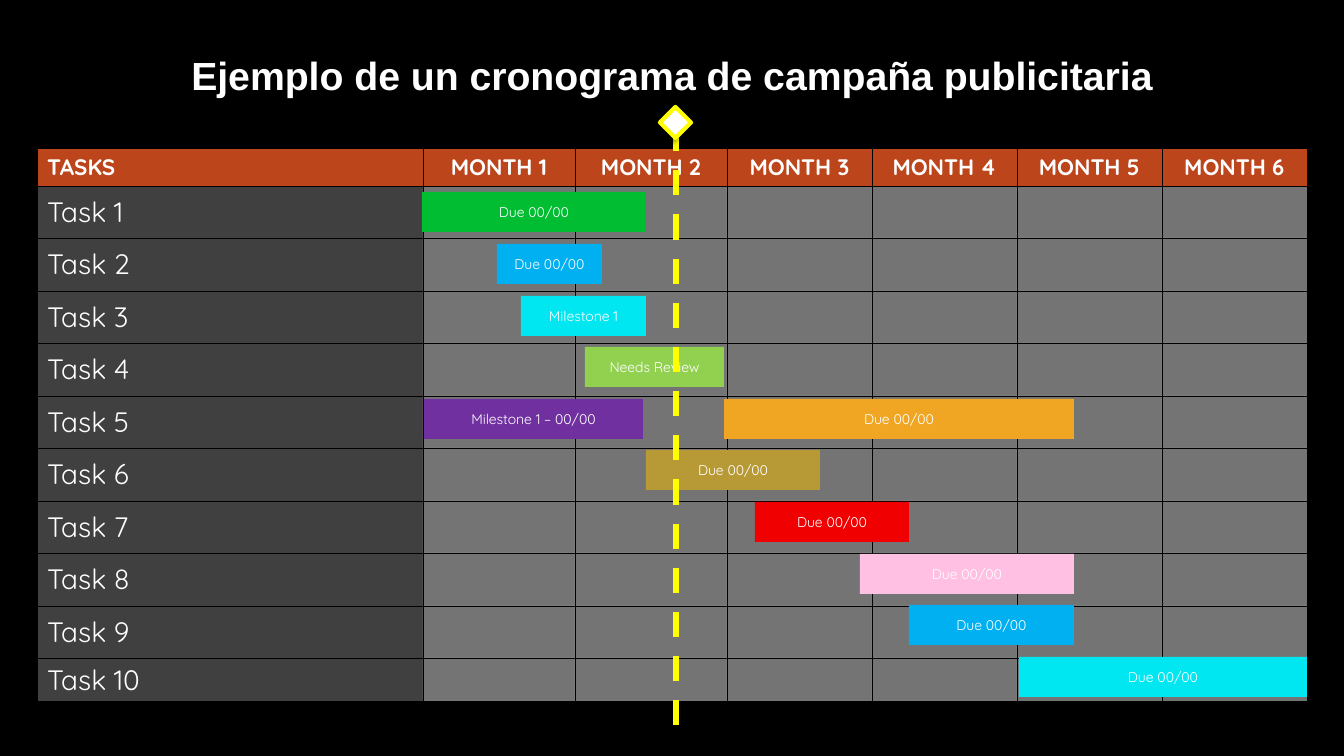
"""Builds a one-slide Gantt timeline for an advertising campaign."""
from dataclasses import dataclass

from lxml import etree
from pptx import Presentation
from pptx.dml.color import RGBColor
from pptx.enum.dml import MSO_LINE
from pptx.enum.shapes import MSO_CONNECTOR, MSO_SHAPE
from pptx.enum.text import MSO_ANCHOR, PP_ALIGN
from pptx.oxml.ns import qn
from pptx.util import Pt

RECTANGLE, DIAMOND = MSO_SHAPE.RECTANGLE, MSO_SHAPE.DIAMOND
STRAIGHT, DASH = MSO_CONNECTOR.STRAIGHT, MSO_LINE.DASH
LEFT, CENTER = PP_ALIGN.LEFT, PP_ALIGN.CENTER
MIDDLE = MSO_ANCHOR.MIDDLE


@dataclass(frozen=True)
class Theme:
    black: str = "000000"
    white: str = "FFFFFF"
    header: str = "BC451B"
    task: str = "404040"
    month: str = "E8E8EA"
    today: str = "FFFF00"
    green: str = "00BD32"
    blue: str = "00B0F0"
    cyan: str = "00E7F2"
    lime: str = "92D050"
    purple: str = "7030A0"
    orange: str = "F0A622"
    gold: str = "B79935"
    red: str = "F10002"
    pink: str = "FFC0E3"
    title_font: str = "Arial"
    body_font: str = "Quicksand"
    title_size: int = 28
    header_size: int = 16
    task_size: int = 20
    bar_size: int = 10


THEME = Theme()


def px(length):
    """Turn slide pixels into EMU."""
    return round(length * 914400 / 100.8)


def write(frame, text, font, size, bold=False, align=CENTER):
    """Put one white line of text, centred vertically, into a frame."""
    frame.text = text
    frame.word_wrap = True
    frame.vertical_anchor = MIDDLE
    line = frame.paragraphs[0]
    line.alignment = align
    line.font.name, line.font.size, line.font.bold = font, Pt(size), bold
    line.font.color.rgb = RGBColor.from_string(THEME.white)


deck = Presentation()
deck.slide_width, deck.slide_height = px(1344), px(756)
slide = deck.slides.add_slide(deck.slide_layouts[5])
slide.background.fill.solid()
slide.background.fill.fore_color.rgb = RGBColor.from_string(THEME.black)

title = slide.shapes.title
title.left, title.top, title.width, title.height = px(161), px(46), px(1022), px(58)
write(title.text_frame, "Ejemplo de un cronograma de campaña publicitaria",
      THEME.title_font, THEME.title_size, bold=True)

TASKS, MONTHS = 10, 6
headings = ["TASKS"] + [f"MONTH {n}" for n in range(1, MONTHS + 1)]
column_widths = [386] + [152] * 2 + [145] * 4
row_edges = [148] + [round(185 + 472 * n / 9) for n in range(TASKS)] + [702]
schedule = slide.shapes.add_table(
    TASKS + 1, MONTHS + 1, px(37), px(row_edges[0]),
    px(sum(column_widths)), px(row_edges[-1] - row_edges[0])).table
schedule.first_row = schedule.horz_banding = False
for column, width in zip(schedule.columns, column_widths):
    column.width = px(width)
for row, top, bottom in zip(schedule.rows, row_edges, row_edges[1:]):
    row.height = px(bottom - top)

for r in range(TASKS + 1):
    for c in range(MONTHS + 1):
        cell = schedule.cell(r, c)
        color = THEME.header if r == 0 else THEME.task if c == 0 else THEME.month
        cell.fill.solid()
        cell.fill.fore_color.rgb = RGBColor.from_string(color)
        properties = cell._tc.get_or_add_tcPr()
        if color == THEME.month:
            tint = properties.find(".//" + qn("a:srgbClr"))
            etree.SubElement(tint, qn("a:alpha"), val="50000")
        else:
            cell.vertical_anchor = MIDDLE
            write(cell.text_frame, headings[c] if r == 0 else f"Task {r}", THEME.body_font,
                  THEME.header_size if r == 0 else THEME.task_size,
                  bold=r == 0, align=CENTER if c else LEFT)
        for position, side in enumerate("LRTB"):
            weight = 3 if r == TASKS and side == "B" else 0.5
            border = etree.Element(qn(f"a:ln{side}"), w=str(Pt(weight)))
            ink = etree.SubElement(border, qn("a:solidFill"))
            etree.SubElement(ink, qn("a:srgbClr"), val=THEME.black)
            properties.insert(position, border)

bars = [
    (1, 422, 224, THEME.green, "Due 00/00"),
    (2, 497, 105, THEME.blue, "Due 00/00"),
    (3, 521, 125, THEME.cyan, "Milestone 1"),
    (4, 585, 139, THEME.lime, "Needs Review"),
    (5, 724, 350, THEME.orange, "Due 00/00"),
    (6, 646, 174, THEME.gold, "Due 00/00"),
    (7, 755, 154, THEME.red, "Due 00/00"),
    (8, 860, 214, THEME.pink, "Due 00/00"),
    (9, 909, 165, THEME.blue, "Due 00/00"),
    (10, 1019, 288, THEME.cyan, "Due 00/00"),
    (5, 424, 219, THEME.purple, "Milestone 1 – 00/00"),
]
for task, left, width, color, label in bars:
    top = round(192.5 + 51.6 * (task - 1))
    bar = slide.shapes.add_shape(RECTANGLE, px(left), px(top), px(width), px(40))
    bar.shadow.inherit = False
    bar.fill.solid()
    bar.fill.fore_color.rgb = RGBColor.from_string(color)
    bar.line.fill.background()
    write(bar.text_frame, label, THEME.body_font, THEME.bar_size)

today = slide.shapes.add_group_shape()
today_line = today.shapes.add_connector(STRAIGHT, px(676), px(126), px(676), px(725))
today_line.line.width = Pt(4.5)
today_line.line.dash_style = DASH
etree.SubElement(today_line._element.spPr, qn("a:effectLst"))

today_marker = today.shapes.add_shape(DIAMOND, px(660), px(107), px(31), px(31))
today_marker.fill.solid()
today_marker.fill.fore_color.rgb = RGBColor.from_string(THEME.white)
today_marker.line.width = Pt(3)
today_marker.shadow.inherit = False
effects = today_marker._element.spPr.find(qn("a:effectLst"))
shade = etree.SubElement(effects, qn("a:outerShdw"), blurRad=str(Pt(4)),
                         dist=str(Pt(3)), dir=str(135 * 60000))
shade_color = etree.SubElement(shade, qn("a:srgbClr"), val=THEME.black)
etree.SubElement(shade_color, qn("a:alpha"), val="40000")
for part in (today_line, today_marker):
    part.line.color.rgb = RGBColor.from_string(THEME.today)

deck.save("out.pptx")
